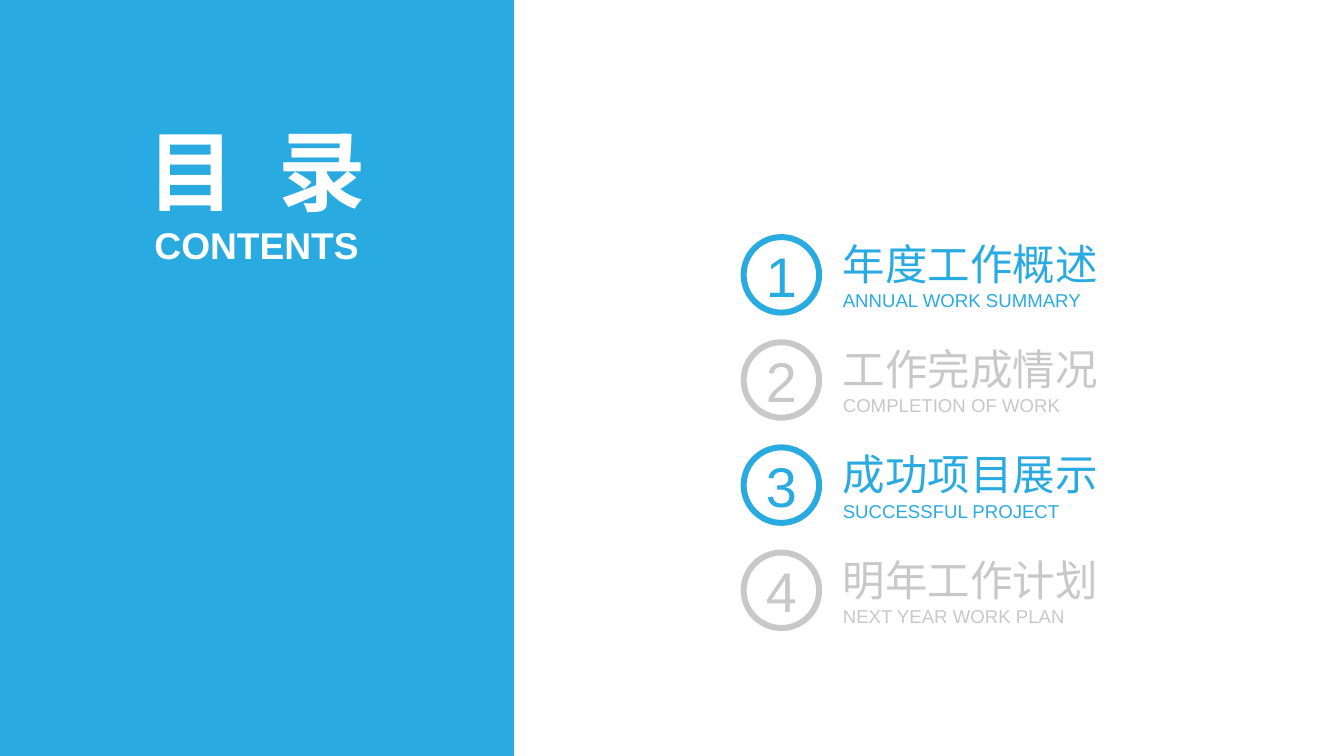
import pptx
import pptx.dml.color
import pptx.enum.shapes
import pptx.enum.text
import pptx.util

Pt = pptx.util.Pt
Align = pptx.enum.text.PP_ALIGN
Anchor = pptx.enum.text.MSO_ANCHOR
Shape = pptx.enum.shapes.MSO_SHAPE

COLOURS = {"blue": "29ABE2", "grey": "C8C8C8", "white": "FFFFFF"}
SECTIONS = [
    ("年度工作概述", "ANNUAL WORK SUMMARY"),
    ("工作完成情况", "COMPLETION OF WORK"),
    ("成功项目展示", "SUCCESSFUL PROJECT"),
    ("明年工作计划", "NEXT YEAR WORK PLAN"),
]
FIRST_TOP = 178.6
SECTION_PITCH = 79.2
CIRCLE_SIZE = 56.9


class SlideBuilder:
    font_name = "Arial"

    def __init__(self, presentation):
        self.slide = presentation.slides.add_slide(presentation.slide_layouts[5])

    def colour(self, name):
        return pptx.dml.color.RGBColor.from_string(COLOURS[name])

    def format_paragraph(self, paragraph, size, colour, align, bold=False):
        paragraph.alignment = align
        font = paragraph.font
        font.name = self.font_name
        font.size = Pt(size)
        font.bold = bold
        font.color.rgb = self.colour(colour)

    def format_frame(self, frame, anchor):
        frame.margin_left = frame.margin_right = Pt(0)
        frame.margin_top = frame.margin_bottom = Pt(0)
        frame.word_wrap = True
        frame.auto_size = pptx.enum.text.MSO_AUTO_SIZE.NONE
        frame.vertical_anchor = anchor

    def title(self, left, top, width, height, characters, gap, size, colour):
        title = self.slide.shapes.title
        title.left, title.top = Pt(left), Pt(top)
        title.width, title.height = Pt(width), Pt(height)
        self.format_frame(title.text_frame, Anchor.MIDDLE)
        paragraph = title.text_frame.paragraphs[0]
        self.format_paragraph(paragraph, size, colour, Align.CENTER, True)
        first, last = characters
        spaced_run = paragraph.add_run()
        spaced_run.text = first + " "
        spaced_run._r.get_or_add_rPr().set("spc", str(gap * 100))
        paragraph.add_run().text = last

    def shape(self, kind, left, top, width, height, fill, line=None, line_width=0):
        shape = self.slide.shapes.add_shape(
            kind, Pt(left), Pt(top), Pt(width), Pt(height))
        shape.shadow.inherit = False
        shape.fill.solid()
        shape.fill.fore_color.rgb = self.colour(fill)
        if line:
            shape.line.color.rgb = self.colour(line)
            shape.line.width = Pt(line_width)
        else:
            shape.line.fill.background()
        return shape

    def panel(self, width, height, colour):
        panel = self.shape(Shape.RECTANGLE, 0, 0, width, height, colour)
        self.slide.shapes._spTree.insert(2, panel._element)

    def number_circle(self, left, top, size, number, colour):
        circle = self.shape(Shape.OVAL, left, top, size, size, "white", colour, 4.5)
        self.format_frame(circle.text_frame, Anchor.MIDDLE)
        paragraph = circle.text_frame.paragraphs[0]
        paragraph.text = str(number)
        self.format_paragraph(paragraph, 42.1, colour, Align.CENTER)

    def text(self, left, top, width, height, lines, colour,
             align=Align.LEFT, anchor=Anchor.MIDDLE, bold=False):
        box = self.slide.shapes.add_textbox(Pt(left), Pt(top), Pt(width), Pt(height))
        frame = box.text_frame
        self.format_frame(frame, anchor)
        frame.text = "\n".join(words for words, size in lines)
        for paragraph, (words, size) in zip(frame.paragraphs, lines):
            self.format_paragraph(paragraph, size, colour, align, bold)


def main():
    presentation = pptx.Presentation()
    presentation.slide_width = Pt(1012.5)
    presentation.slide_height = Pt(569.5)
    builder = SlideBuilder(presentation)
    builder.panel(387.4, 569.5, "blue")
    builder.title(97.9, 87.8, 191.5, 79.9, "目录", 9, 66, "white")
    builder.text(98.6, 167.8, 189.4, 33.8, [("CONTENTS", 28)], "white",
                 Align.CENTER, Anchor.TOP, True)
    for index, (heading, translation) in enumerate(SECTIONS):
        top = FIRST_TOP + index * SECTION_PITCH
        colour = ("blue", "grey")[index % 2]
        builder.number_circle(560.2, top, CIRCLE_SIZE, index + 1, colour)
        builder.text(635, top, 213, CIRCLE_SIZE,
                     [(heading, 32), (translation, 14)], colour)
    presentation.save("out.pptx")


if __name__ == "__main__":
    main()
